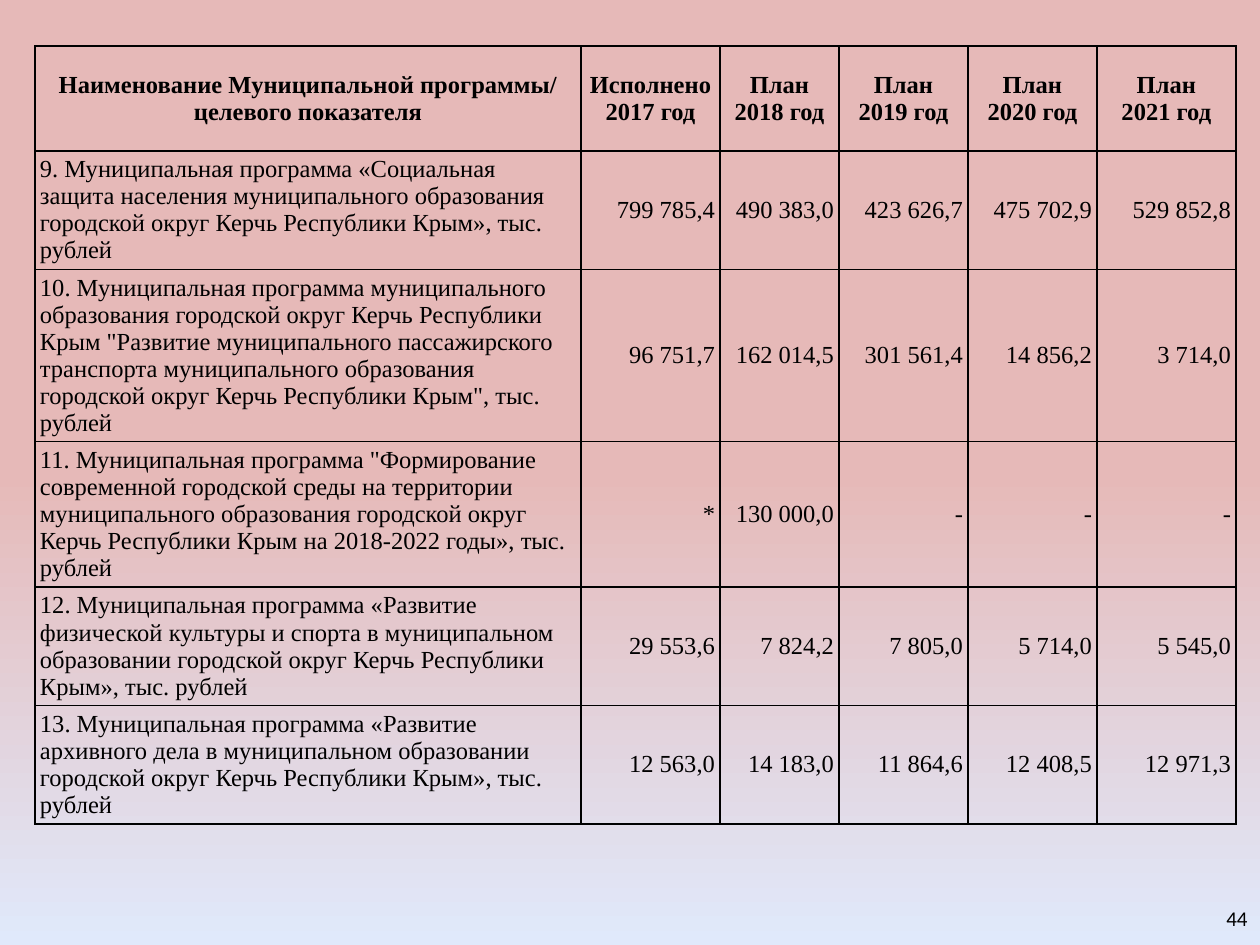
from dataclasses import dataclass

from lxml import etree
from pptx import Presentation
from pptx import util as u
from pptx.dml.color import RGBColor
from pptx.enum import text
from pptx.oxml.ns import qn

EMU_PER_PX = 914400 / 126
COLORS = {"ink": "000000", "top": "E6B9B8", "bottom": "E0E9FB"}
TABLE_FONT, NUMBER_FONT = "Times New Roman", "Calibri"
LEFT, CENTER, RIGHT = text.PP_ALIGN.LEFT, text.PP_ALIGN.CENTER, text.PP_ALIGN.RIGHT
MIDDLE = text.MSO_ANCHOR.MIDDLE


@dataclass(frozen=True)
class Column:
    heading: tuple[str, ...]
    width: int


@dataclass(frozen=True)
class Program:
    name: str
    values: tuple[str, ...]
    height: int


TABLE_LEFT, TABLE_TOP, HEADER_HEIGHT = 35, 46, 105
COLUMNS = [
    Column(("Наименование Муниципальной программы/", "целевого показателя"), 546),
    Column(("Исполнено 2017 год",), 139),
    Column(("План", "2018 год"), 119),
    Column(("План", "2019 год"), 129),
    Column(("План", "2020 год"), 129),
    Column(("План", "2021 год"), 139),
]
PROGRAMS = [
    Program(
        "9. Муниципальная программа «Социальная защита населения муниципального "
        "образования городской округ Керчь Республики Крым», тыс. рублей",
        ("799 785,4", "490 383,0", "423 626,7", "475 702,9", "529 852,8"), 118),
    Program(
        "10. Муниципальная программа муниципального образования городской округ "
        "Керчь Республики Крым \"Развитие муниципального пассажирского транспорта "
        "муниципального образования городской округ Керчь Республики Крым\", "
        "тыс. рублей",
        ("96 751,7", "162 014,5", "301 561,4", "14 856,2", "3 714,0"), 172),
    Program(
        "11. Муниципальная программа \"Формирование современной городской среды на "
        "территории муниципального образования городской округ Керчь Республики "
        "Крым на 2018-2022 годы», тыс. рублей",
        ("*", "130 000,0", "-", "-", "-"), 145),
    Program(
        "12. Муниципальная программа «Развитие физической культуры и спорта в "
        "муниципальном образовании городской округ Керчь Республики Крым», "
        "тыс. рублей",
        ("29 553,6", "7 824,2", "7 805,0", "5 714,0", "5 545,0"), 118),
    Program(
        "13. Муниципальная программа «Развитие архивного дела в муниципальном "
        "образовании городской округ Керчь Республики Крым», тыс. рублей",
        ("12 563,0", "14 183,0", "11 864,6", "12 408,5", "12 971,3"), 118),
]


def px(length: int) -> u.Emu:
    return u.Emu(round(length * EMU_PER_PX))


def write(frame, lines: tuple[str, ...], align, font: str, size: int,
          bold: bool = False) -> None:
    for index, line in enumerate(lines):
        paragraph = frame.paragraphs[0] if index == 0 else frame.add_paragraph()
        paragraph.alignment = align
        run = paragraph.add_run()
        run.text = line
        run.font.name, run.font.size, run.font.bold = font, u.Pt(size), bold
        run.font.color.rgb = RGBColor.from_string(COLORS["ink"])


def add_borders(cell) -> None:
    properties = cell._tc.get_or_add_tcPr()
    for side in ("lnL", "lnR", "lnT", "lnB"):
        line = etree.SubElement(properties, qn(f"a:{side}"), w=str(u.Pt(1)))
        fill = etree.SubElement(line, qn("a:solidFill"))
        etree.SubElement(fill, qn("a:srgbClr"), val=COLORS["ink"])


def fill_cell(cell, lines: tuple[str, ...], align, inset: int,
              bold: bool = False) -> None:
    add_borders(cell)
    cell.fill.background()
    cell.margin_left = cell.margin_right = px(inset)
    cell.margin_top = cell.margin_bottom = px(inset)
    if align != LEFT:
        cell.vertical_anchor = MIDDLE
    write(cell.text_frame, lines, align, TABLE_FONT, 14, bold)


def add_program_table(slide) -> None:
    heights = [HEADER_HEIGHT] + [program.height for program in PROGRAMS]
    widths = [column.width for column in COLUMNS]
    table = slide.shapes.add_table(
        len(heights), len(widths), px(TABLE_LEFT), px(TABLE_TOP),
        px(sum(widths)), px(sum(heights))).table
    table.first_row = table.horz_banding = False
    for row, height in zip(table.rows, heights):
        row.height = px(height)
    for index, column in enumerate(COLUMNS):
        table.columns[index].width = px(column.width)
        fill_cell(table.cell(0, index), column.heading, CENTER, 4, bold=True)
    for row_index, program in enumerate(PROGRAMS, start=1):
        fill_cell(table.cell(row_index, 0), (program.name,), LEFT, 5)
        for column_index, value in enumerate(program.values, start=1):
            fill_cell(table.cell(row_index, column_index), (value,), RIGHT, 5)


def add_page_number(slide, number: str) -> None:
    frame = slide.shapes.add_textbox(px(1008), px(893), px(252), px(50)).text_frame
    frame.word_wrap = True
    frame.vertical_anchor = MIDDLE
    write(frame, (number,), RIGHT, NUMBER_FONT, 12)


def paint_background(slide) -> None:
    fill = slide.background.fill
    fill.gradient()
    fill.gradient_angle = 270
    for stop, position, color in zip(fill.gradient_stops, (0.5, 1), ("top", "bottom")):
        stop.position = position
        stop.color.rgb = RGBColor.from_string(COLORS[color])


def main() -> None:
    presentation = Presentation()
    presentation.slide_width, presentation.slide_height = px(1260), px(945)
    slide = presentation.slides.add_slide(presentation.slide_layouts[6])
    paint_background(slide)
    add_program_table(slide)
    add_page_number(slide, "44")
    presentation.save("out.pptx")


if __name__ == "__main__":
    main()
